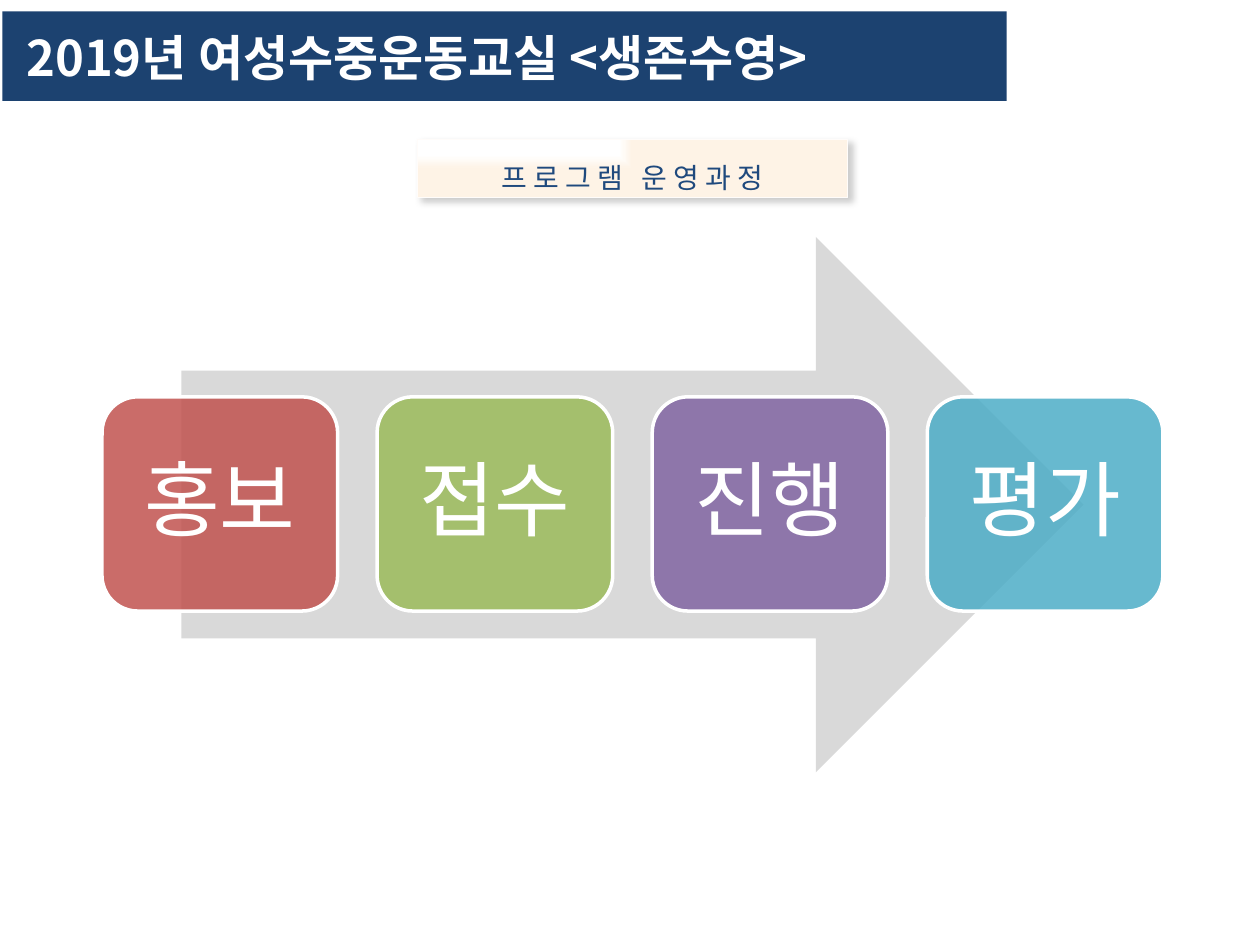
from dataclasses import dataclass

from lxml import etree
from pptx import Presentation
from pptx.dml.color import RGBColor
from pptx.enum.shapes import MSO_SHAPE
from pptx.enum.text import MSO_ANCHOR, PP_ALIGN
from pptx.oxml import parse_xml
from pptx.oxml.ns import nsdecls, qn
from pptx.shapes.autoshape import Shape
from pptx.slide import Slide
from pptx.text.text import _Paragraph
from pptx.util import Inches, Pt

RECTANGLE = MSO_SHAPE.RECTANGLE
ROUNDED = MSO_SHAPE.ROUNDED_RECTANGLE
RIGHT_ARROW = MSO_SHAPE.RIGHT_ARROW
MIDDLE = MSO_ANCHOR.MIDDLE
TOP = MSO_ANCHOR.TOP
LEFT = PP_ALIGN.LEFT
CENTER = PP_ALIGN.CENTER

FONT = "Noto Sans CJK KR"
COLORS = {
    "white": "FFFFFF",
    "arrow": "D9D9D9",
    "navy": "1C4270",
    "blue": "1F497D",
    "cream": "FEF3E6",
    "cream_line": "FFFCFA",
    "red": "C0504D",
    "green": "9BBB59",
    "purple": "8064A2",
    "aqua": "4BACC6",
}


@dataclass(frozen=True)
class Step:
    label: str
    color: str


STEPS = [
    Step("홍보", "red"),
    Step("접수", "green"),
    Step("진행", "purple"),
    Step("평가", "aqua"),
]
FIRST_LEFT = 0.81
LAST_LEFT = 7.36
STEP_PITCH = (LAST_LEFT - FIRST_LEFT) / (len(STEPS) - 1)


def rgb(name: str) -> RGBColor:
    return RGBColor.from_string(COLORS[name])


def add_box(
    page: Slide,
    preset: MSO_SHAPE,
    place: tuple[float, float, float, float],
    fill: str,
) -> Shape:
    box = page.shapes.add_shape(preset, *(Inches(length) for length in place))
    box.shadow.inherit = False
    box.fill.solid()
    box.fill.fore_color.rgb = rgb(fill)
    box.line.fill.background()
    return box


def set_outline(box: Shape, color: str, width: float) -> None:
    box.line.color.rgb = rgb(color)
    box.line.width = Pt(width)


def set_opacity(box: Shape, percent: int) -> None:
    color = box.fill._xPr.find(qn("a:solidFill"))[0]
    etree.SubElement(color, qn("a:alpha"), val=str(percent * 1000))


def start_text(
    box: Shape,
    anchor: MSO_ANCHOR,
    align: PP_ALIGN,
    insets: tuple[float, float, float, float],
    line_spacing: float = 1.0,
) -> _Paragraph:
    frame = box.text_frame
    frame.word_wrap = True
    frame.vertical_anchor = anchor
    left, top, right, bottom = (Inches(inset) for inset in insets)
    frame.margin_left, frame.margin_top = left, top
    frame.margin_right, frame.margin_bottom = right, bottom
    para = frame.paragraphs[0]
    para.alignment = align
    para.line_spacing = line_spacing
    return para


def add_span(
    para: _Paragraph,
    text: str,
    size: float,
    color: str,
    bold: bool = False,
    tracking: float = 0,
) -> None:
    span = para.add_run()
    span.text = text
    span.font.size = Pt(size)
    span.font.bold = bold
    span.font.name = FONT
    span.font.color.rgb = rgb(color)
    properties = span.font._element
    etree.SubElement(properties, qn("a:ea"), typeface=FONT)
    if tracking:
        properties.set("spc", str(round(tracking * 100)))


def add_step(page: Slide, step: Step, left: float) -> None:
    box = add_box(page, ROUNDED, (left, 3.15, 1.87, 1.7), step.color)
    set_opacity(box, 84)
    set_outline(box, "white", 2)
    para = start_text(box, MIDDLE, CENTER, (0.2, 0.2, 0.2, 0.2), 0.9)
    add_span(para, step.label, 47, "white")


def add_title(page: Slide) -> None:
    box = add_box(page, RECTANGLE, (0.02, 0.09, 7.97, 0.71), "navy")
    para = start_text(box, TOP, LEFT, (0.19, 0.13, 0.1, 0))
    add_span(para, "2019년 여성수중운동교실 <생존수영>", 28, "white", bold=True)


def add_subtitle(page: Slide) -> None:
    box = add_box(page, RECTANGLE, (3.31, 1.11, 3.42, 0.46), "cream")
    set_outline(box, "cream_line", 0.5)
    properties = box.fill._xPr
    gradient = parse_xml(
        f'<a:gradFill {nsdecls("a")} rotWithShape="1"><a:gsLst>'
        f'<a:gs pos="53000"><a:srgbClr val="{COLORS["white"]}"/></a:gs>'
        f'<a:gs pos="100000"><a:srgbClr val="{COLORS["cream"]}"/></a:gs>'
        '</a:gsLst><a:path path="rect">'
        '<a:fillToRect r="100000" b="100000"/></a:path></a:gradFill>'
    )
    properties.replace(properties.find(qn("a:solidFill")), gradient)
    effects = properties.find(qn("a:effectLst"))
    effects.append(parse_xml(
        f'<a:outerShdw {nsdecls("a")} blurRad="{Pt(4)}" dist="{Pt(3)}" '
        'dir="2700000" algn="tl" rotWithShape="0">'
        '<a:srgbClr val="000000"><a:alpha val="20000"/></a:srgbClr>'
        '</a:outerShdw>'
    ))
    para = start_text(box, MIDDLE, CENTER, (0.1, 0.05, 0.1, 0.05), 1.5)
    add_span(para, "프 로 그 램", 16, "blue")
    add_span(para, " ", 16, "blue", tracking=7.2)
    add_span(para, "운 영 과 정", 16, "blue")


def main() -> None:
    deck = Presentation()
    deck.slide_width = Inches(10)
    deck.slide_height = Inches(7.5)
    page = deck.slides.add_slide(deck.slide_layouts[6])
    add_box(page, RIGHT_ARROW, (1.44, 1.88, 7.16, 4.25), "arrow")
    for index, step in enumerate(STEPS):
        add_step(page, step, FIRST_LEFT + index * STEP_PITCH)
    add_title(page)
    add_subtitle(page)
    deck.save("out.pptx")


if __name__ == "__main__":
    main()
